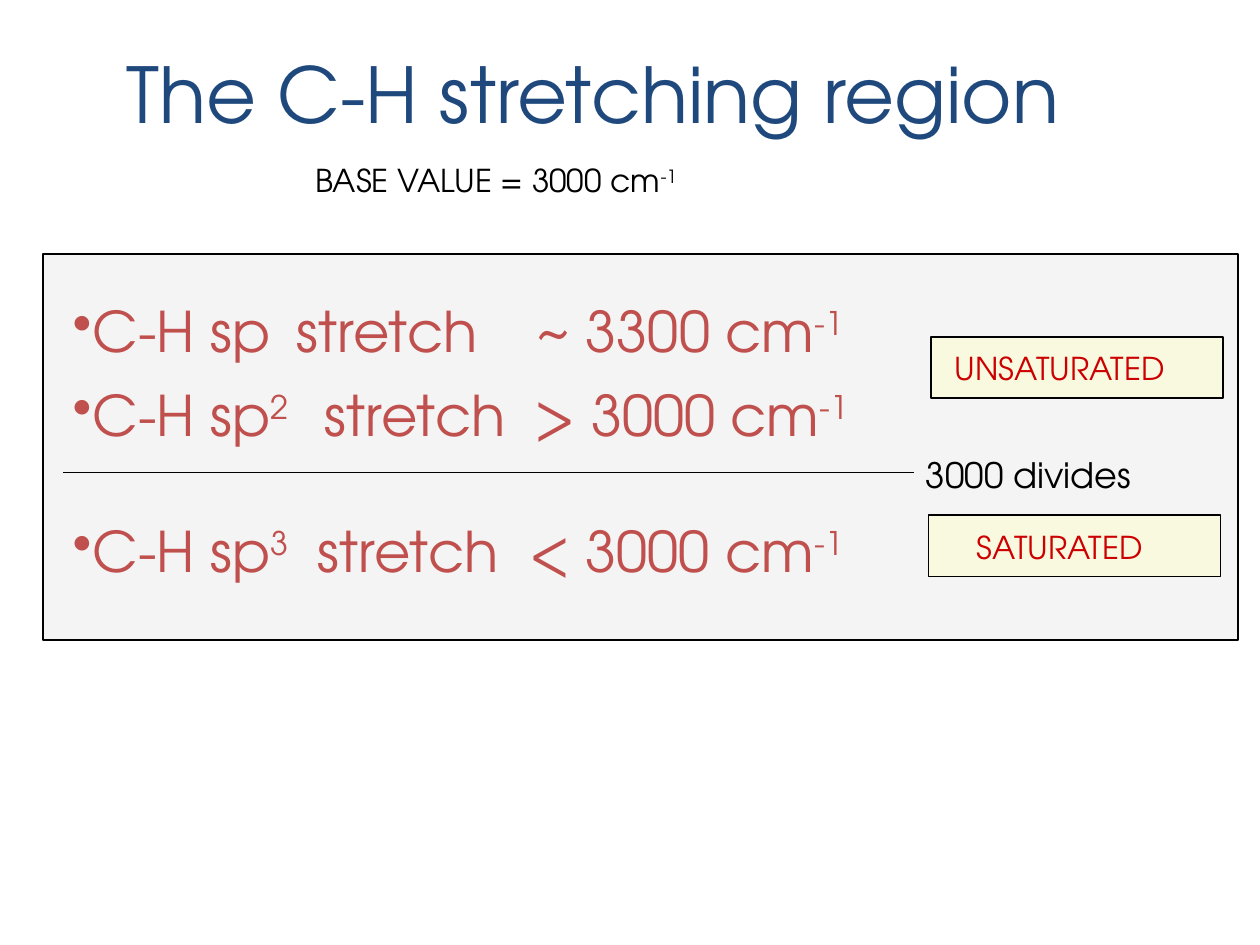
from lxml.etree import SubElement
from pptx import Presentation
from pptx.dml.color import RGBColor
from pptx.enum.shapes import MSO_CONNECTOR as Connector, MSO_SHAPE as Shape
from pptx.enum.text import MSO_ANCHOR as Anchor, MSO_AUTO_SIZE as AutoSize, PP_ALIGN as Align
from pptx.oxml.ns import qn
from pptx.util import Pt

FONT = "TeX Gyre Adventor"
BLACK, BLUE, BRICK, RED = "000000", "1F497D", "C0504D", "CC0000"
GREY, YELLOW = "EAEAEA", "FFFFCC"


def color(hex_value):
    return RGBColor.from_string(hex_value)


def add_panel(slide, left, top, width, height, fill):
    """Half-transparent rectangle with a thin black outline."""
    panel = slide.shapes.add_shape(Shape.RECTANGLE, Pt(left), Pt(top), Pt(width), Pt(height))
    panel.shadow.inherit = False
    panel.fill.solid()
    panel.fill.fore_color.rgb = color(fill)
    fill_element = panel.fill._xPr.find(qn("a:solidFill"))
    SubElement(fill_element[0], qn("a:alpha"), val="50000")
    panel.line.color.rgb = color(BLACK)
    panel.line.width = Pt(1)


def add_divider(slide, left, right, y):
    line = slide.shapes.add_connector(Connector.STRAIGHT, Pt(left), Pt(y), Pt(right), Pt(y))
    line.line.color.rgb = color(BLACK)
    line.line.width = Pt(1)
    SubElement(line._element.spPr, qn("a:effectLst"))


def write_text(shape, runs, size, hex_value):
    """Fill a one-line shape; runs are (text, is_superscript) pairs."""
    frame = shape.text_frame
    frame.word_wrap = False
    frame.auto_size = AutoSize.SHAPE_TO_FIT_TEXT
    frame.vertical_anchor = Anchor.TOP
    paragraph = frame.paragraphs[0]
    paragraph.alignment = Align.LEFT
    for text, is_superscript in runs:
        run = paragraph.add_run()
        run.text = text
        run.font.name = FONT
        run.font.size = Pt(size)
        run.font.color.rgb = color(hex_value)
        if is_superscript:
            run.font._element.set("baseline", "30000")
    return paragraph


def add_label(slide, left, top, width, height, runs, size, hex_value):
    box = slide.shapes.add_textbox(Pt(left), Pt(top), Pt(width), Pt(height))
    return write_text(box, runs, size, hex_value)


def add_stretch(slide, top, hybrid, value, tab_stops):
    """Bulleted line: bond, vibration and wavenumber set on tab stops."""
    runs = [("C-H sp", False), (hybrid, True), ("\tstretch\t" + value + " cm", False), ("-1", True)]
    runs = [run for run in runs if run[0]]
    paragraph = add_label(slide, 34.5, top, 465, 45, runs, 32, BRICK)
    properties = paragraph._p.get_or_add_pPr()
    properties.set("marL", "0")
    properties.set("indent", "0")
    SubElement(properties, qn("a:buChar"), char="•")
    tab_list = SubElement(properties, qn("a:tabLst"))
    for stop in tab_stops:
        SubElement(tab_list, qn("a:tab"), pos=str(Pt(stop)), algn="l")


def add_title(slide, text):
    title = slide.shapes.title
    title.left, title.top, title.width, title.height = Pt(65), Pt(23), Pt(565), Pt(60)
    write_text(title, [(text, False)], 44, BLUE)


def main():
    presentation = Presentation()
    presentation.slide_width, presentation.slide_height = Pt(720), Pt(540)
    slide = presentation.slides.add_slide(presentation.slide_layouts[5])

    # Panels behind the text
    add_panel(slide, 24.5, 145, 683, 221, GREY)
    add_panel(slide, 530.5, 294.5, 167, 35, YELLOW)
    add_panel(slide, 532, 192.5, 167, 35, YELLOW)

    # Dividing line and classes
    add_divider(slide, 36, 522, 270)
    add_label(slide, 522, 255.5, 137, 31, [("3000 divides", False)], 20, BLACK)
    add_label(slide, 538.5, 196, 154, 29, [("UNSATURATED", False)], 18, RED)
    add_label(slide, 551, 298, 127, 29, [("SATURATED", False)], 18, RED)

    # Stretching frequencies by hybridisation
    add_stretch(slide, 166, "", "~ 3300", (128, 265))
    add_stretch(slide, 214, "2", "> 3000", (144, 264))
    add_stretch(slide, 291.5, "3", "< 3000", (140, 261))

    # Heading and base value
    add_title(slide, "The C-H stretching region")
    add_label(slide, 173, 88.5, 309, 36, [("BASE VALUE = 3000 cm", False), ("-1", True)], 18, BLACK)

    presentation.save("out.pptx")


if __name__ == "__main__":
    main()
